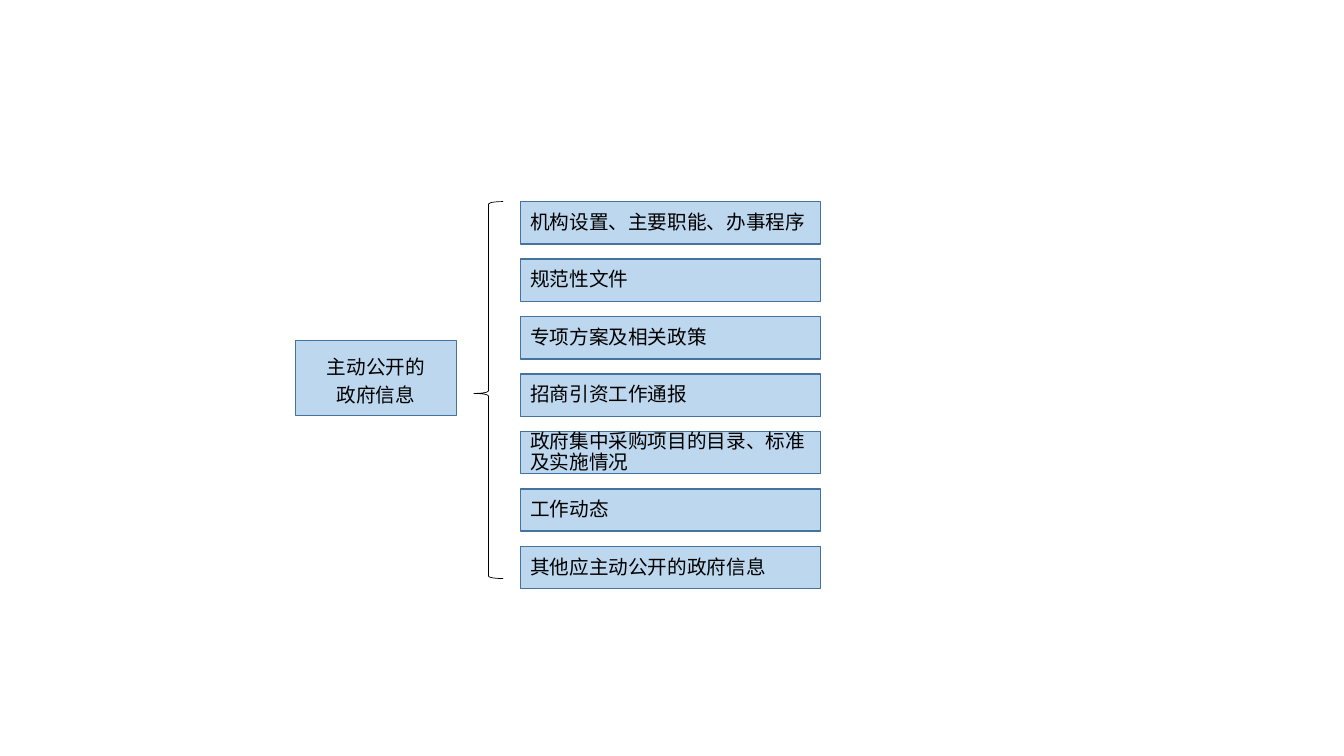
from dataclasses import dataclass

import pptx
import pptx.dml.color
import pptx.enum.shapes
import pptx.enum.text
import pptx.oxml.ns
import pptx.util
from lxml import etree
from pptx.util import Inches


@dataclass(frozen=True)
class Theme:
    fill: str = "BDD7EE"
    border: str = "43739E"
    ink: str = "000000"
    font: str = "Noto Sans CJK SC"
    size: int = 14


theme = Theme()
rgb = pptx.dml.color.RGBColor.from_string
shapes = pptx.enum.shapes.MSO_SHAPE
align = pptx.enum.text.PP_ALIGN

# Slide
deck = pptx.Presentation()
deck.slide_width, deck.slide_height = Inches(13.33), Inches(7.5)
page = deck.slides.add_slide(deck.slide_layouts[6])


def add_box(text, *, left, top, width, height, spacing, alignment=align.LEFT):
    box = page.shapes.add_shape(
        shapes.RECTANGLE, Inches(left), Inches(top), Inches(width), Inches(height))
    box.shadow.inherit = False
    box.fill.solid()
    box.fill.fore_color.rgb = rgb(theme.fill)
    box.line.color.rgb = rgb(theme.border)
    box.line.width = pptx.util.Pt(1)
    frame = box.text_frame
    frame.word_wrap = True
    frame.vertical_anchor = pptx.enum.text.MSO_ANCHOR.MIDDLE
    frame.text = text
    for para in frame.paragraphs:
        para.alignment = alignment
        para.line_spacing = pptx.util.Pt(spacing)
        for span in para.runs:
            span.font.name = theme.font
            span.font.size = pptx.util.Pt(theme.size)
            span.font.color.rgb = rgb(theme.ink)
            # East Asian text takes its typeface from a:ea
            east_asian = etree.SubElement(
                span.font._element, pptx.oxml.ns.qn("a:ea"))
            east_asian.set("typeface", theme.font)


# Root topic
add_box("主动公开的\n政府信息", left=2.93, top=3.38, width=1.6, height=0.74,
        spacing=20, alignment=align.CENTER)

# Brace joining the topic to its categories
brace = page.shapes.add_shape(
    shapes.LEFT_BRACE, Inches(4.7), Inches(2), Inches(0.29), Inches(3.74))
brace.adjustments[0] = 0.083
brace.adjustments[1] = 0.509
brace.shadow.inherit = False
brace.fill.background()
brace.line.color.rgb = rgb(theme.ink)
brace.line.width = pptx.util.Pt(0.5)

# Categories, evenly stacked
categories = [
    "机构设置、主要职能、办事程序",
    "规范性文件",
    "专项方案及相关政策",
    "招商引资工作通报",
    "政府集中采购项目的目录、标准\n及实施情况",
    "工作动态",
    "其他应主动公开的政府信息",
]
for row, category in enumerate(categories):
    add_box(category, left=5.16, top=2 + 0.57 * row, width=2.98, height=0.42,
            spacing=15)

deck.save("out.pptx")
